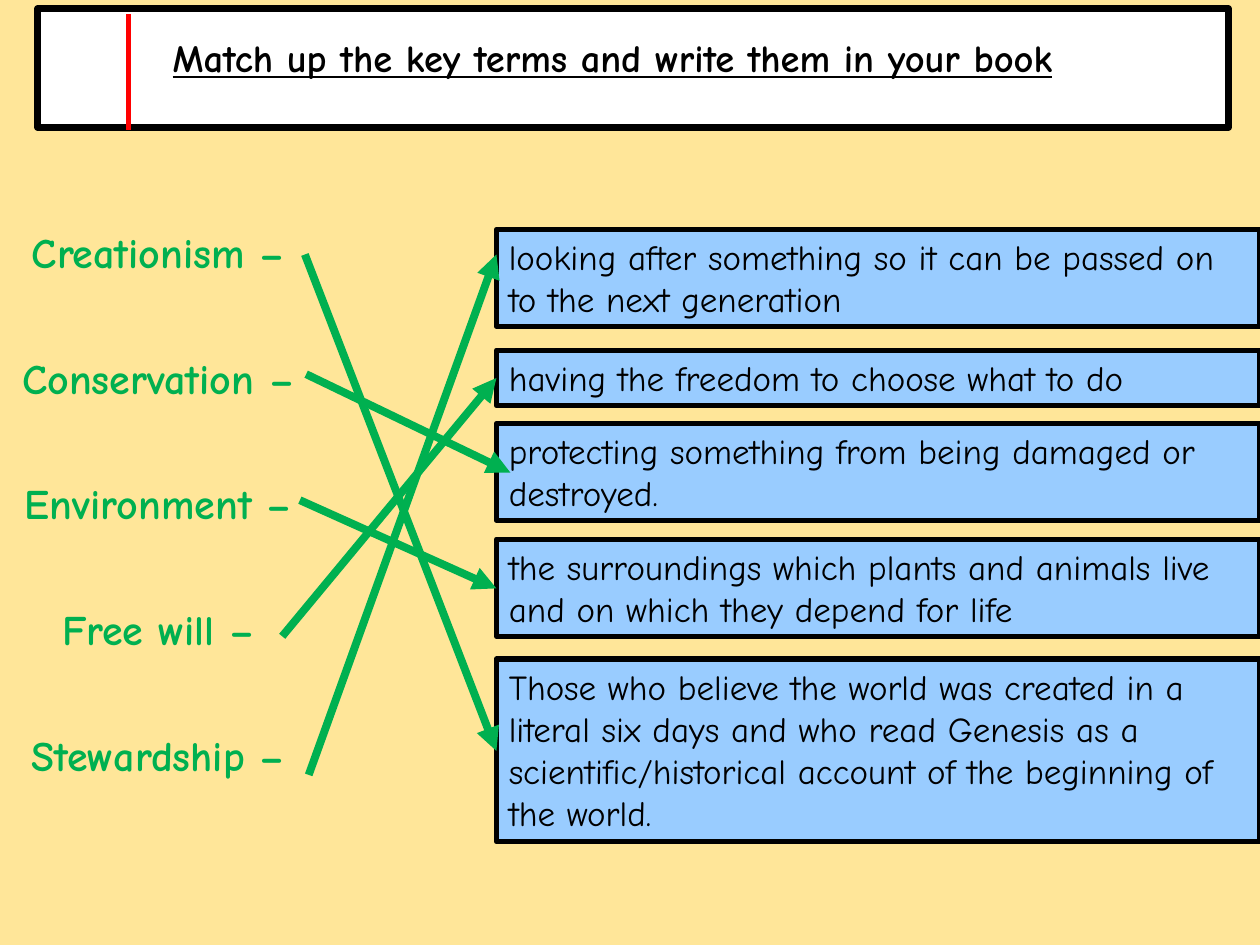
from lxml.etree import SubElement
from pptx import Presentation
from pptx.dml.color import RGBColor
from pptx.enum.shapes import MSO_CONNECTOR as Link
from pptx.enum.text import MSO_ANCHOR as Anchor, MSO_AUTO_SIZE as Fit, PP_ALIGN as Align
from pptx.oxml.ns import qn
from pptx.util import Inches, Pt

FONT = "Comic Neue"
BLACK = RGBColor(0x00, 0x00, 0x00)
WHITE = RGBColor(0xFF, 0xFF, 0xFF)
CREAM = RGBColor(0xFF, 0xE6, 0x99)
BLUE = RGBColor(0x99, 0xCC, 0xFF)
GREEN = RGBColor(0x00, 0xB0, 0x50)
RED = RGBColor(0xFF, 0x00, 0x00)

TERMS = ["Creationism – ", "Conservation – ", "Environment – ", "Free will – ", "Stewardship – "]
# top, height, wording
MEANINGS = [
    (1.82, 0.77, "looking after something so it can be passed on to the next generation"),
    (2.78, 0.44, "having the freedom to choose what to do"),
    (3.36, 0.77, "protecting something from being damaged or destroyed."),
    (4.28, 0.77, "the surroundings which plants and animals live and on which they depend for life"),
    (5.23, 1.45, "Those who believe the world was created in a literal six days and who read "
                 "Genesis as a scientific/historical account of the beginning of the world."),
]
# from a term to its meaning
MATCHES = [
    ((2.24, 5.05), (3.94, 3.0)),
    ((2.38, 3.97), (3.94, 4.67)),
    ((2.42, 2.02), (3.94, 5.96)),
    ((2.43, 2.97), (4.05, 3.75)),
    ((2.45, 6.15), (3.94, 2.02)),
]


def write(frame, lines, size, color=BLACK, bold=False, under=False,
          align=Align.LEFT, space=None, gap=0):
    """Put one paragraph per line in the frame, with gap points before each."""
    frame.word_wrap = True
    for i, line in enumerate(lines):
        para = frame.paragraphs[0] if i == 0 else frame.add_paragraph()
        para.alignment = align
        para.line_spacing = space
        para.space_before = Pt(gap if i else 0)
        run = para.add_run()
        run.text = line
        font = run.font
        font.name, font.size, font.bold, font.underline = FONT, Pt(size), bold, under
        font.color.rgb = color


def place(shape, left, top, width, height):
    shape.left, shape.top = Inches(left), Inches(top)
    shape.width, shape.height = Inches(width), Inches(height)


def paint(shape, fill, weight):
    shape.fill.solid()
    shape.fill.fore_color.rgb = fill
    shape.line.color.rgb = BLACK
    shape.line.width = Pt(weight)


class Board:
    def __init__(self, deck):
        self.slide = deck.slides.add_slide(deck.slide_layouts[1])
        back = self.slide.background.fill
        back.solid()
        back.fore_color.rgb = CREAM

    def title(self, text):
        shape = self.slide.shapes.title
        place(shape, 0.3, 0.07, 9.45, 0.94)
        paint(shape, WHITE, 4)
        frame = shape.text_frame
        frame.auto_size = Fit.NONE
        frame.vertical_anchor = Anchor.BOTTOM
        frame.margin_left, frame.margin_right = Inches(1.07), Inches(0.07)
        frame.margin_top, frame.margin_bottom = Inches(0.04), Inches(0.37)
        write(frame, [text], 22, bold=True, under=True, space=0.9)

    def terms(self, names):
        shape = self.slide.placeholders[1]
        place(shape, -0.02, 1.79, 2.68, 4.69)
        frame = shape.text_frame
        frame.auto_size = Fit.NONE
        write(frame, names, 24, GREEN, bold=True, align=Align.CENTER, space=0.9, gap=46)
        for para in frame.paragraphs:
            props = para._p.get_or_add_pPr()
            props.set("marL", "0")
            props.set("indent", "0")
            SubElement(props, qn("a:buNone"))

    def meaning(self, top, height, text):
        box = self.slide.shapes.add_textbox(
            Inches(3.94), Inches(top), Inches(6.06), Inches(height))
        paint(box, BLUE, 3)
        write(box.text_frame, [text], 20)
        box.text_frame.auto_size = Fit.SHAPE_TO_FIT_TEXT

    def line(self, start, end, color, weight, arrow=False):
        ends = [Inches(n) for n in (*start, *end)]
        link = self.slide.shapes.add_connector(Link.STRAIGHT, *ends)
        link.line.color.rgb = color
        link.line.width = Pt(weight)
        if arrow:
            SubElement(link.line._get_or_add_ln(), qn("a:tailEnd"), type="triangle")
        SubElement(link._element.spPr, qn("a:effectLst"))


def main():
    deck = Presentation()
    deck.slide_width, deck.slide_height = Inches(10), Inches(7.5)
    board = Board(deck)
    board.title("Match up the key terms and write them in your book")
    board.line((1.02, 0.11), (1.02, 1.03), RED, 2.5)
    board.terms(TERMS)
    for row in MEANINGS:
        board.meaning(*row)
    for start, end in MATCHES:
        board.line(start, end, GREEN, 4.5, arrow=True)
    deck.save("out.pptx")


if __name__ == "__main__":
    main()
